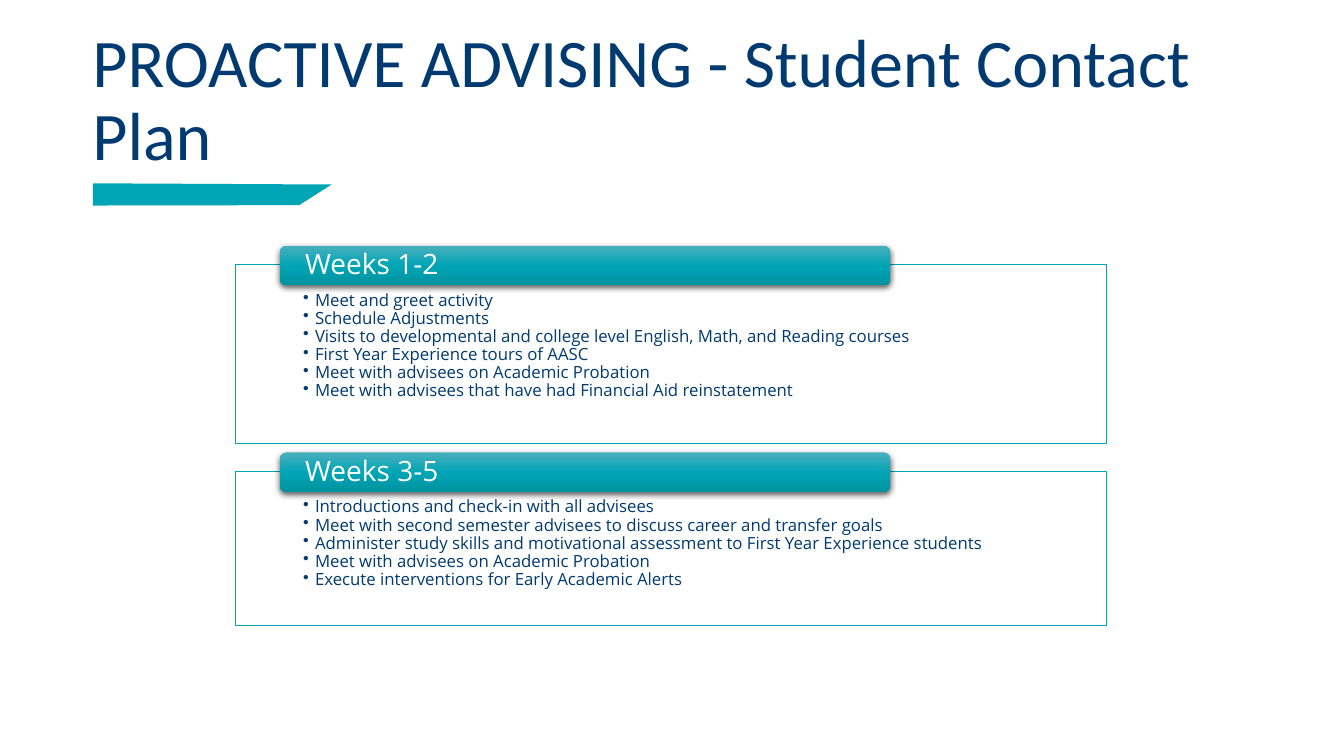
from copy import deepcopy

from lxml.etree import SubElement
from pptx import Presentation
from pptx.dml.color import RGBColor
from pptx.enum.shapes import MSO_SHAPE as SHAPE
from pptx.enum.text import MSO_ANCHOR as ANCHOR, PP_ALIGN as ALIGN
from pptx.oxml.ns import qn
from pptx.util import Cm, Pt

NAVY = RGBColor(0x00, 0x3A, 0x70)
TEAL = RGBColor(0x00, 0xA5, 0xB5)
LIGHT_TEAL = RGBColor(0x4B, 0xAF, 0xBE)
DARK_TEAL = RGBColor(0x00, 0x93, 0xA1)
WHITE = RGBColor(0xFF, 0xFF, 0xFF)

TITLE = "PROACTIVE ADVISING - Student Contact Plan"
# Heading, panel top and height in cm, activities
PERIODS = [
    ("Weeks 1-2", 6.66, 4.52, [
        "Meet and greet activity",
        "Schedule Adjustments",
        "Visits to developmental and college level English, Math, and Reading courses",
        "First Year Experience tours of AASC",
        "Meet with advisees on Academic Probation",
        "Meet with advisees that have had Financial Aid reinstatement",
    ]),
    ("Weeks 3-5", 11.87, 3.89, [
        "Introductions and check-in with all advisees",
        "Meet with second semester advisees to discuss career and transfer goals",
        "Administer study skills and motivational assessment to First Year Experience students",
        "Meet with advisees on Academic Probation",
        "Execute interventions for Early Academic Alerts",
    ]),
]


class ContactPlan:
    title_font = {"name": "Calibri", "size": Pt(48.6)}
    heading_font = {"name": "Open Sans", "size": Pt(20)}
    body_font = {"name": "Open Sans", "size": Pt(12)}
    bar_gradient = [(0, LIGHT_TEAL), (0.5, TEAL), (1, DARK_TEAL)]
    panel_left, panel_width = 5.94, 21.95
    bar_left, bar_width, bar_height, bar_rise = 7.06, 15.37, 1, 0.47

    def __init__(self, slide):
        self.s = slide

    def add_text(self, sp, lines, font, color, anchor, margins=(0.25, 0.13, 0.25, 0.13)):
        tf = sp.text_frame
        left, top, right, bottom = map(Cm, margins)
        frame = {"word_wrap": True, "vertical_anchor": anchor, "margin_left": left,
                 "margin_top": top, "margin_right": right, "margin_bottom": bottom}
        for key, value in frame.items():
            setattr(tf, key, value)
        for i, line in enumerate(lines):
            p = tf.paragraphs[0] if i == 0 else tf.add_paragraph()
            p.alignment = ALIGN.LEFT
            p.line_spacing = 0.9
            r = p.add_run()
            r.text = line
            for key, value in font.items():
                setattr(r.font, key, value)
            r.font.color.rgb = color
        return tf

    def title(self, text):
        sp = self.s.shapes.add_textbox(Cm(2.08), Cm(1.78), Cm(29.69), Cm(2.77))
        self.add_text(sp, [text], self.title_font, NAVY, ANCHOR.BOTTOM)

    def accent(self, points):
        corners = [(Cm(x), Cm(y)) for x, y in points]
        builder = self.s.shapes.build_freeform(*corners[0])
        builder.add_line_segments(corners[1:], close=True)
        sp = builder.convert_to_shape()
        sp.shadow.inherit = False
        sp.fill.solid()
        sp.fill.fore_color.rgb = TEAL
        sp.line.fill.background()

    def panel(self, top, height, items):
        sp = self.s.shapes.add_shape(SHAPE.RECTANGLE, Cm(self.panel_left), Cm(top),
                                     Cm(self.panel_width), Cm(height))
        sp.shadow.inherit = False
        sp.fill.solid()
        sp.fill.fore_color.rgb = WHITE
        color = sp._element.spPr.find(qn("a:solidFill")).find(qn("a:srgbClr"))
        SubElement(color, qn("a:alpha"), val="90000")
        sp.line.color.rgb = TEAL
        sp.line.width = Pt(0.5)
        tf = self.add_text(sp, items, self.body_font, NAVY, ANCHOR.TOP, (1.7, 0.69, 1.7, 0.23))
        for p in tf.paragraphs:
            pPr = p._p.get_or_add_pPr()
            pPr.set("marL", str(Cm(0.3)))
            pPr.set("indent", str(-Cm(0.3)))
            SubElement(pPr, qn("a:buChar"), char="•")

    def heading_bar(self, panel_top, text):
        sp = self.s.shapes.add_shape(SHAPE.ROUNDED_RECTANGLE, Cm(self.bar_left),
                                     Cm(panel_top - self.bar_rise),
                                     Cm(self.bar_width), Cm(self.bar_height))
        sp.line.fill.background()
        # Three-stop vertical gradient
        sp.fill.gradient()
        sp.fill.gradient_angle = 270
        spPr = sp._element.spPr
        stops = spPr.find(qn("a:gradFill")).find(qn("a:gsLst"))
        stops.append(deepcopy(stops[0]))
        for stop, (position, color) in zip(sp.fill.gradient_stops, self.bar_gradient):
            stop.position = position
            stop.color.rgb = color
        # Soft shadow below the bar
        sp.shadow.inherit = False
        shadow = SubElement(spPr.find(qn("a:effectLst")), qn("a:outerShdw"),
                            blurRad=str(Pt(4.5)), dist=str(Pt(1.5)),
                            dir="5400000", rotWithShape="0")
        black = SubElement(shadow, qn("a:srgbClr"), val="000000")
        SubElement(black, qn("a:alpha"), val="63000")
        self.add_text(sp, [text], self.heading_font, WHITE, ANCHOR.MIDDLE, (0.58, 0, 0.58, 0))


def main():
    prs = Presentation()
    prs.slide_width, prs.slide_height = Cm(33.87), Cm(19.05)
    plan = ContactPlan(prs.slides.add_slide(prs.slide_layouts[6]))

    # Title and its accent
    plan.accent([(2.34, 4.62), (8.36, 4.65), (7.54, 5.17), (2.34, 5.18)])
    plan.title(TITLE)

    # One panel with a heading bar per period
    for heading, top, height, items in PERIODS:
        plan.panel(top, height, items)
        plan.heading_bar(top, heading)

    prs.save("out.pptx")


if __name__ == "__main__":
    main()
